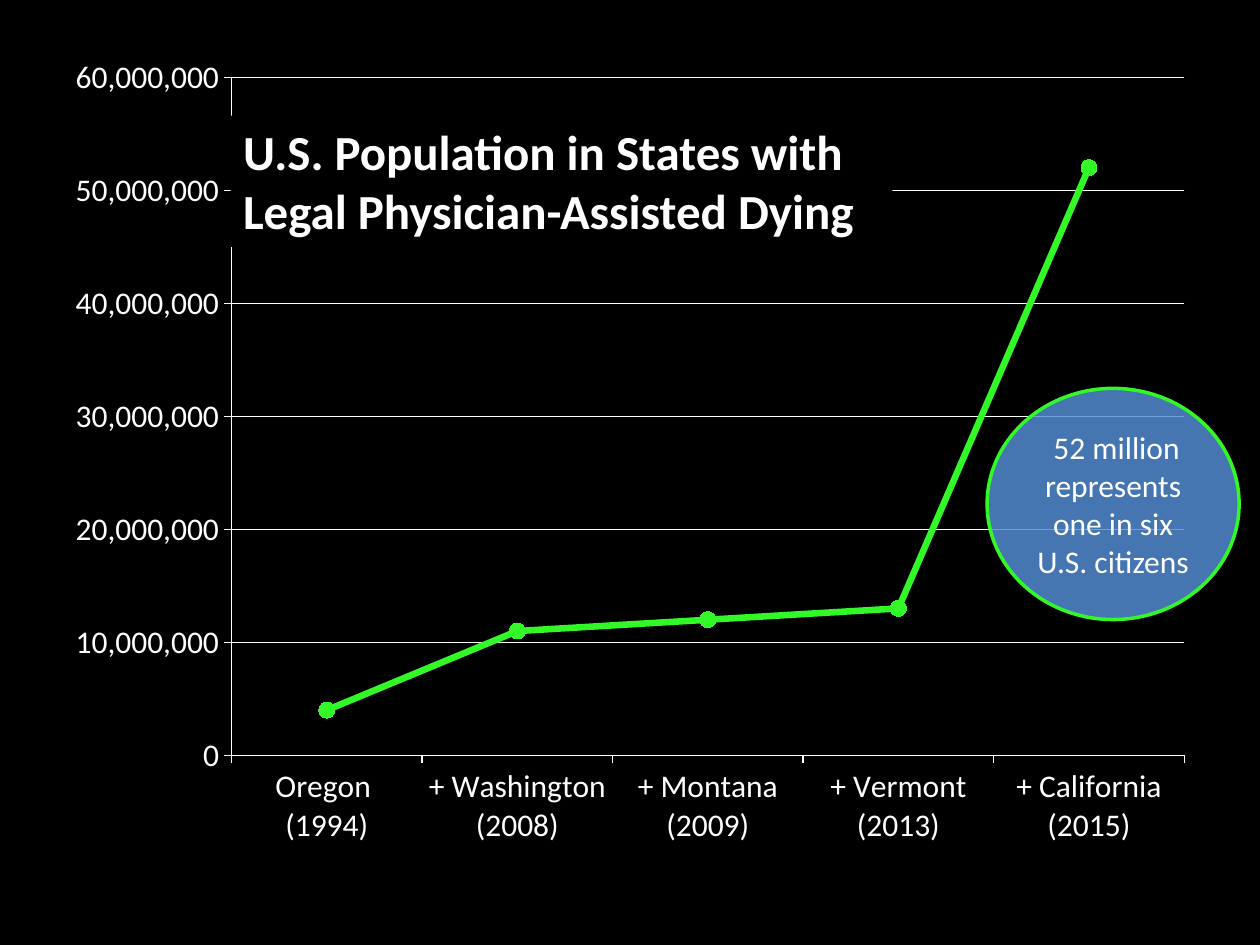
from lxml import etree
from pptx import Presentation
from pptx.chart.data import CategoryChartData
from pptx.dml.color import RGBColor
from pptx.enum.chart import XL_CHART_TYPE, XL_MARKER_STYLE, XL_TICK_MARK
from pptx.enum.shapes import MSO_SHAPE
from pptx.enum.text import MSO_ANCHOR, MSO_AUTO_SIZE, PP_ALIGN
from pptx.oxml import parse_xml
from pptx.oxml.ns import nsdecls, qn
from pptx.util import Cm, Pt

BLACK = RGBColor(0x00, 0x00, 0x00)
WHITE = RGBColor(0xFF, 0xFF, 0xFF)
GREEN = RGBColor(0x32, 0xF8, 0x28)
BLUE = RGBColor(0x55, 0x8E, 0xD5)


def set_font(font, size, bold=False):
    font.name = "Calibri"
    font.size = Pt(size)
    font.bold = bold
    font.color.rgb = WHITE


prs = Presentation()
prs.slide_width = Cm(25.4)
prs.slide_height = Cm(19.05)
s = prs.slides.add_slide(prs.slide_layouts[6])
s.background.fill.solid()
s.background.fill.fore_color.rgb = BLACK

data = CategoryChartData(number_format="#,##0")
data.categories = ["Oregon \n(1994)", "+ Washington (2008)", "+ Montana (2009)",
                   "+ Vermont (2013)", "+ California (2015)"]
data.add_series("Series 1", [4000000, 11000000, 12000000, 13000000, 52000000])
chart = s.shapes.add_chart(XL_CHART_TYPE.LINE_MARKERS, Cm(1.06), Cm(0.85),
                           Cm(23.28), Cm(16.51), data).chart
chart.has_legend = False
chart.has_title = False
set_font(chart.font, 18)
layout = parse_xml(
    f'<c:layout {nsdecls("c")}><c:manualLayout><c:layoutTarget val="inner"/>'
    '<c:xMode val="edge"/><c:yMode val="edge"/><c:x val="0.155"/><c:y val="0.043"/>'
    '<c:w val="0.825"/><c:h val="0.828"/></c:manualLayout></c:layout>')
plot_area = chart.plots[0]._element.getparent()
for old in plot_area.findall(qn("c:layout")):
    plot_area.remove(old)
plot_area.insert(0, layout)

value_axis = chart.value_axis
value_axis.minimum_scale = 0
value_axis.maximum_scale = 60000000
value_axis.major_unit = 10000000
value_axis.has_major_gridlines = True
value_axis.tick_labels.number_format = "#,##0"
value_axis.tick_labels.number_format_is_linked = False
for axis in (chart.category_axis, value_axis):
    axis.major_tick_mark = XL_TICK_MARK.OUTSIDE
    axis.minor_tick_mark = XL_TICK_MARK.NONE
for line in (chart.category_axis.format.line, value_axis.format.line,
             value_axis.major_gridlines.format.line):
    line.color.rgb = WHITE
    line.width = Pt(0.75)

chart.plots[0].vary_by_categories = False
series = chart.plots[0].series[0]
series.smooth = False
series.format.line.color.rgb = GREEN
series.format.line.width = Pt(3.75)
series.marker.style = XL_MARKER_STYLE.CIRCLE
series.marker.size = 9
series.marker.format.fill.solid()
series.marker.format.fill.fore_color.rgb = GREEN
series.marker.format.line.color.rgb = GREEN

title = s.shapes.add_textbox(Cm(4.65), Cm(2.33), Cm(13.34), Cm(2.65))
title.fill.solid()
title.fill.fore_color.rgb = BLACK
tf = title.text_frame
tf.word_wrap = True
tf.auto_size = MSO_AUTO_SIZE.SHAPE_TO_FIT_TEXT
tf.text = "U.S. Population in States with Legal Physician-Assisted Dying"
set_font(tf.paragraphs[0].runs[0].font, 28, True)

sp = s.shapes.add_shape(MSO_SHAPE.OVAL, Cm(19.9), Cm(7.83), Cm(5.08), Cm(4.66))
sp.shadow.inherit = False
sp.fill.solid()
sp.fill.fore_color.rgb = BLUE
color = sp._element.spPr.find(qn("a:solidFill"))[0]
etree.SubElement(color, qn("a:alpha")).set("val", "83000")
sp.line.color.rgb = GREEN
sp.line.width = Pt(2)
tf = sp.text_frame
tf.word_wrap = True
tf.vertical_anchor = MSO_ANCHOR.MIDDLE
tf.text = " 52 million represents one in six U.S. citizens "
p = tf.paragraphs[0]
p.alignment = PP_ALIGN.CENTER
set_font(p.runs[0].font, 18)

prs.save("out.pptx")
